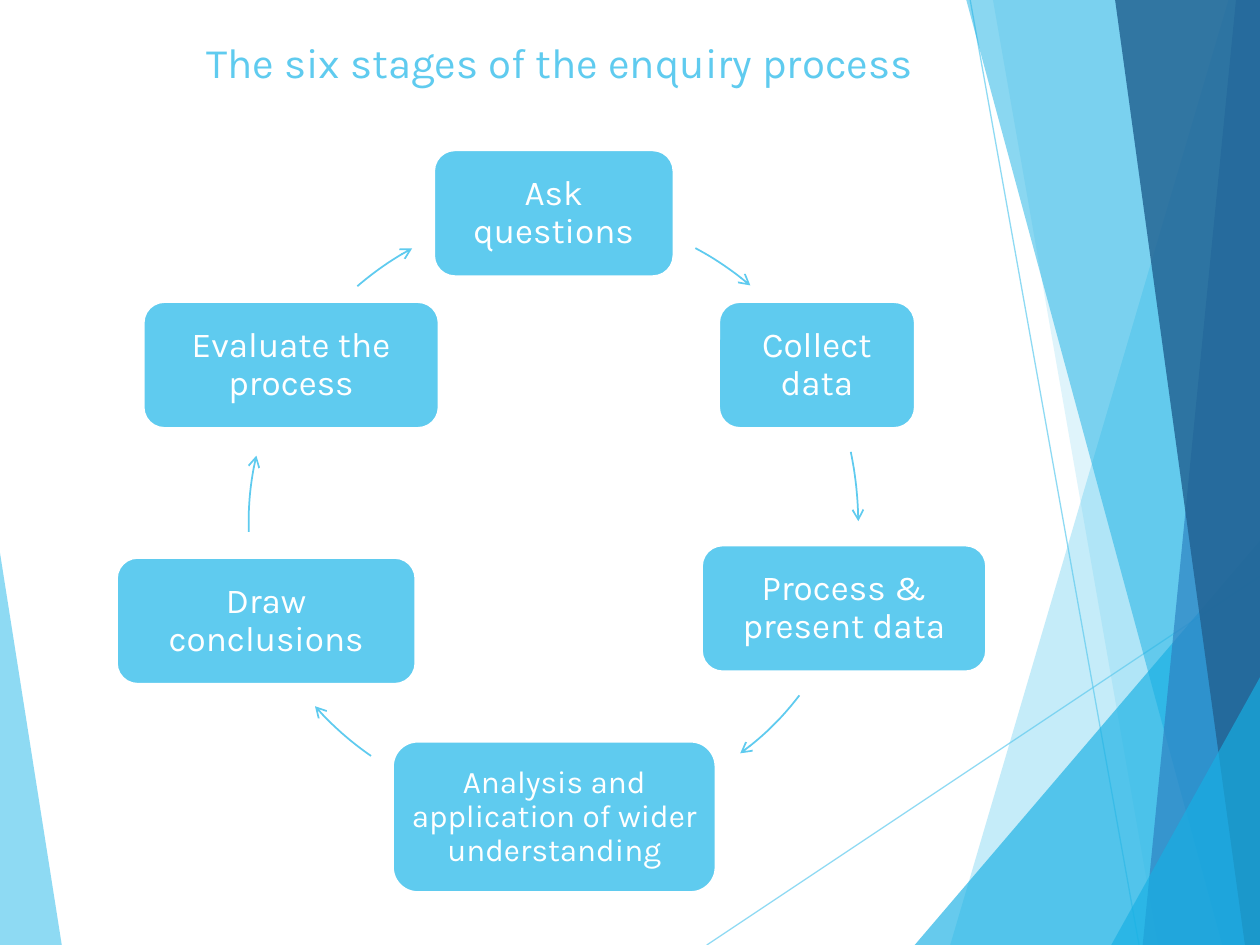
import pptx
import pptx.util
import pptx.dml.color
import pptx.enum.shapes
import pptx.enum.text
import pptx.oxml.ns
import pptx.oxml.xmlchemy

Pt = pptx.util.Pt
qn = pptx.oxml.ns.qn
W, H = 720, 540
FONT = "Karla"
COLORS = {"sky": "5FCBEF", "cyan": "17B0E4", "blue": "2E83C3",
          "navy": "226292", "white": "FFFFFF"}

FACETS = [
    ([(0, 316), (35.3, H), (0, H)], "sky", 70),
    ([(702, 0), (W, 0), (W, H), (543, H)], "sky", 36),
    ([(567.4, 0), (W, 0), (W, H), (661.7, H)], "sky", 20),
    ([(W, 309), (W, H), (522.7, H)], "cyan", 66),
    ([(552.2, 0), (W, 0), (W, H), (698.4, H)], "cyan", 50),
    ([(706.3, 0), (W, 0), (W, H), (653, H)], "blue", 70),
    ([(637.2, 0), (W, 0), (W, H), (711.4, H)], "navy", 82),
    ([(W, 387), (W, H), (635, H)], "cyan", 66),
]
RAYS = [(403.9, H, W, 329.3), (554.4, 0, 650.9, H)]

STAGES = [
    ("Ask questions", (247.9, 85.7, 137.2, 72.4), 20),
    ("Collect data", (410.7, 172.4, 112.3, 72.4), 20),
    ("Process & present data", (400.9, 311.5, 162.8, 72.4), 20),
    ("Analysis and application of wider understanding",
     (224.3, 423.6, 184.8, 86.4), 18),
    ("Draw conclusions", (66.6, 318.6, 171, 72.4), 20),
    ("Evaluate the process", (81.9, 172.4, 169, 72.4), 20),
]
ARCS = [
    [(397.4, 141.8), (408.6, 147.7), (419.1, 155), (428.8, 163.1)],
    [(486.2, 258.2), (488.9, 271.2), (490.3, 284.5), (490.5, 297.8)],
    [(456.8, 397.4), (447.3, 410), (435.9, 421.2), (423, 430.5)],
    [(212, 432), (200.2, 423.8), (189.4, 414.3), (180, 403.6)],
    [(142.2, 304), (141.7, 289.4), (143.1, 274.8), (146.5, 260.4)],
    [(204.2, 163.6), (213.9, 155.3), (224.3, 148), (235.5, 142)],
]


def rgb(name):
    return pptx.dml.color.RGBColor.from_string(COLORS[name])


def apply(obj, values):
    for name, value in values.items():
        setattr(obj, name, value)


def append_element(parent, tag, **attributes):
    child = pptx.oxml.xmlchemy.OxmlElement(tag)
    for name, value in attributes.items():
        child.set(name, value)
    parent.append(child)


def set_fill(sp, color):
    sp.fill.solid()
    sp.fill.fore_color.rgb = rgb(color)


def set_line(sp, color, width):
    sp.line.color.rgb = rgb(color)
    sp.line.width = Pt(width)


def set_alpha(sp, percent):
    for clr in sp._element.iter(qn("a:srgbClr")):
        append_element(clr, "a:alpha", val=str(percent * 1000))


def add_path(s, points, close):
    pts = [(Pt(x), Pt(y)) for x, y in points]
    builder = s.shapes.build_freeform(*pts[0])
    builder.add_line_segments(pts[1:], close=close)
    sp = builder.convert_to_shape()
    sp.shadow.inherit = False
    return sp


def add_facet(s, points, color, alpha):
    sp = add_path(s, points, True)
    set_fill(sp, color)
    sp.line.fill.background()
    set_alpha(sp, alpha)


def add_ray(s, ends):
    line = s.shapes.add_connector(
        pptx.enum.shapes.MSO_CONNECTOR.STRAIGHT, *map(Pt, ends))
    set_line(line, "sky", 0.75)
    append_element(line._element.spPr, "a:effectLst")
    set_alpha(line, 70)


def bezier(a, b, c, d, steps=12):
    for i in range(steps + 1):
        t = i / steps
        u = 1 - t
        weights = (u ** 3, 3 * u * u * t, 3 * u * t * t, t ** 3)
        yield tuple(sum(w * v for w, v in zip(weights, axis))
                    for axis in zip(a, b, c, d))


def add_arc(s, controls):
    sp = add_path(s, list(bezier(*controls)), False)
    sp.fill.background()
    set_line(sp, "sky", 1)
    append_element(sp._element.spPr.find(qn("a:ln")), "a:tailEnd", type="arrow")


def write(tf, text, size, color, frame, paragraph):
    apply(tf, {"word_wrap": True, **frame})
    p = tf.paragraphs[0]
    apply(p, paragraph)
    r = p.add_run()
    r.text = text
    apply(r.font, {"name": FONT, "size": Pt(size)})
    r.font.color.rgb = rgb(color)


def add_stage(s, text, box, size):
    sp = s.shapes.add_shape(
        pptx.enum.shapes.MSO_SHAPE.ROUNDED_RECTANGLE, *map(Pt, box))
    sp.shadow.inherit = False
    set_fill(sp, "sky")
    set_line(sp, "white", 1.5)
    sides = ("left", "top", "right", "bottom")
    frame = {f"margin_{side}": Pt(5.5) for side in sides}
    frame["vertical_anchor"] = pptx.enum.text.MSO_ANCHOR.MIDDLE
    write(sp.text_frame, text, size, "white", frame,
          {"alignment": pptx.enum.text.PP_ALIGN.CENTER, "line_spacing": 0.9})


def add_title(s, text):
    sp = s.shapes.add_textbox(Pt(110.9), Pt(17.3), Pt(499.7), Pt(103.7))
    write(sp.text_frame, text, 24, "sky",
          {"vertical_anchor": pptx.enum.text.MSO_ANCHOR.TOP}, {})


def main():
    prs = pptx.Presentation()
    apply(prs, {"slide_width": Pt(W), "slide_height": Pt(H)})
    s = prs.slides.add_slide(prs.slide_layouts[6])
    add_facet(s, *FACETS[0])
    for ends in RAYS:
        add_ray(s, ends)
    for facet in FACETS[1:]:
        add_facet(s, *facet)
    for stage, arc in zip(STAGES, ARCS):
        add_stage(s, *stage)
        add_arc(s, arc)
    add_title(s, "The six stages of the enquiry process")
    prs.save("out.pptx")


if __name__ == "__main__":
    main()
